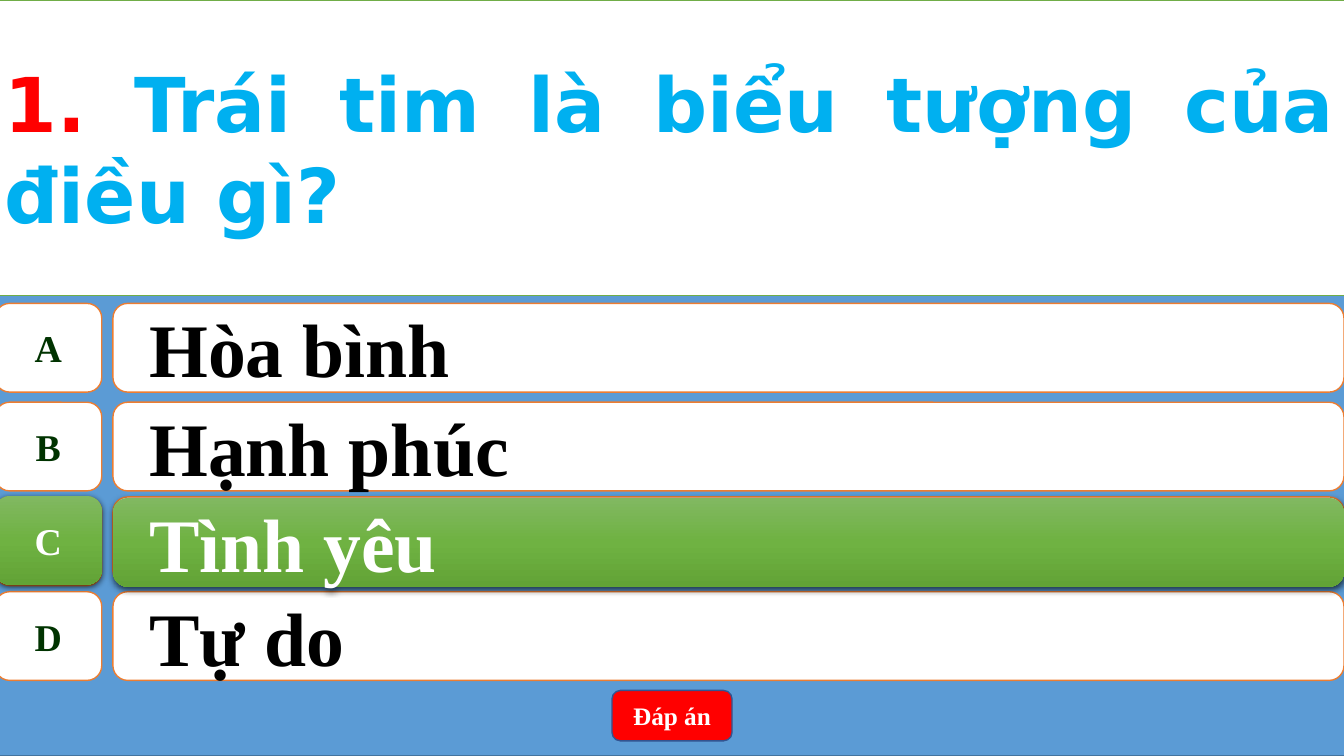
from dataclasses import dataclass
from typing import Optional

import pptx
import pptx.dml.color
import pptx.enum.shapes
import pptx.enum.text
import pptx.oxml
import pptx.oxml.ns
import pptx.util

Inches = pptx.util.Inches
SHAPES = pptx.enum.shapes.MSO_SHAPE
ALIGN = pptx.enum.text.PP_ALIGN

COLORS = {
    "backdrop": "5B9BD5", "backdrop_edge": "43739E",
    "white": "FFFFFF", "black": "000000", "orange": "ED7D31",
    "letter": "003300", "green": "70AD47",
    "red": "FF0000", "button_edge": "325491", "sky": "00B0F0",
    "green_top": "81B861", "green_middle": "6FB242", "green_bottom": "62A336",
}
FORMATS = {
    "question": {"size": pptx.util.Pt(54), "name": "DejaVu Sans", "bold": True},
    "answer": {"size": pptx.util.Pt(54), "name": "Times New Roman", "bold": True},
    "letter": {"size": pptx.util.Pt(27), "name": "Times New Roman", "bold": True},
    "button": {"size": pptx.util.Pt(18), "name": "Times New Roman", "bold": True},
}
LEFT, FULL_WIDTH = -0.05, 13.39
ROW_HEIGHT = 0.88


@dataclass
class Span:
    text: str
    color: str


@dataclass
class Panel:
    kind: int
    left: float
    top: float
    width: float
    height: float
    fill: Optional[str] = "white"  # None gives the green gradient
    line: Optional[str] = "orange"


@dataclass
class Row:
    letter: str
    answer: str
    top: float


ROWS = [
    Row("A", "Hòa bình", 3.01),
    Row("B", "Hạnh phúc", 3.99),
    Row("C", "", 4.93),
    Row("D", "Tự do", 5.87),
]


def rgb(name: str) -> pptx.dml.color.RGBColor:
    return pptx.dml.color.RGBColor.from_string(COLORS[name])


def add_green_finish(box) -> None:
    """Give a box the vertical green gradient and a soft shadow."""
    box.fill.gradient()
    box.fill.gradient_angle = 270
    properties = box._element.spPr
    namespace = pptx.oxml.ns.nsdecls("a")
    stops = properties.find(".//" + pptx.oxml.ns.qn("a:gsLst"))
    for stop in list(stops):
        stops.remove(stop)
    for index, name in enumerate(("green_top", "green_middle", "green_bottom")):
        stops.append(pptx.oxml.parse_xml(
            f'<a:gs {namespace} pos="{index * 50000}">'
            f'<a:srgbClr val="{COLORS[name]}"/></a:gs>'))
    effects = properties.find(pptx.oxml.ns.qn("a:effectLst"))
    effects.append(pptx.oxml.parse_xml(
        f'<a:outerShdw {namespace} blurRad="{pptx.util.Pt(4.5)}" '
        f'dist="{pptx.util.Pt(1.5)}" dir="5400000" algn="ctr" rotWithShape="0">'
        f'<a:srgbClr val="{COLORS["black"]}"><a:alpha val="63000"/></a:srgbClr>'
        '</a:outerShdw>'))


def add_panel(page, panel: Panel):
    box = page.shapes.add_shape(
        panel.kind, Inches(panel.left), Inches(panel.top),
        Inches(panel.width), Inches(panel.height))
    box.shadow.inherit = False
    if panel.fill:
        box.fill.solid()
        box.fill.fore_color.rgb = rgb(panel.fill)
    else:
        add_green_finish(box)
    if panel.line:
        box.line.color.rgb = rgb(panel.line)
        box.line.width = pptx.util.Pt(1)
    else:
        box.line.fill.background()
    return box


def write(box, style: str, align: int, spans: list[Span], wrap: bool = True):
    frame = box.text_frame
    frame.word_wrap = wrap
    frame.vertical_anchor = pptx.enum.text.MSO_ANCHOR.MIDDLE
    para = frame.paragraphs[0]
    para.alignment = align
    for span in spans:
        run = para.add_run()
        run.text = span.text
        for key, value in FORMATS[style].items():
            setattr(run.font, key, value)
        run.font.color.rgb = rgb(span.color)
    return para


def add_row(page, row: Row, answer_top: float, fill: Optional[str],
            line: Optional[str], letter_color: str, answer_color: str) -> None:
    letter_box = add_panel(page, Panel(
        SHAPES.FLOWCHART_ALTERNATE_PROCESS, LEFT, row.top, 1.06, ROW_HEIGHT, fill, line))
    answer_box = add_panel(page, Panel(
        SHAPES.ROUNDED_RECTANGLE, 1.12, answer_top, 12.21, ROW_HEIGHT, fill, line))
    if row.answer:
        write(letter_box, "letter", ALIGN.CENTER, [Span(row.letter, letter_color)], wrap=False)
        para = write(answer_box, "answer", ALIGN.LEFT, [Span(row.answer, answer_color)])
        para.level = 1
        indents = para._p.get_or_add_pPr()
        indents.set("marL", str(Inches(0.5)))
        indents.set("indent", str(Inches(-0.28)))


def main() -> None:
    deck = pptx.Presentation()
    deck.slide_width, deck.slide_height = Inches(13.33), Inches(7.5)
    page = deck.slides.add_slide(deck.slide_layouts[6])

    # Blue backdrop
    add_panel(page, Panel(SHAPES.RECTANGLE, LEFT, 0, FULL_WIDTH, 7.5,
                          "backdrop", "backdrop_edge"))

    # Answer rows; the plate of row C carries the green answer
    for row in ROWS:
        add_row(page, row, row.top, "white", "orange", "letter", "black")
    add_row(page, Row("C", "Tình yêu", 4.92), 4.94, None, None, "white", "white")

    # Answer button
    button = add_panel(page, Panel(SHAPES.ROUNDED_RECTANGLE, 6.07, 6.85, 1.19, 0.5,
                                   "red", "button_edge"))
    write(button, "button", ALIGN.CENTER, [Span("Đáp án", "white")])

    # Question
    question = add_panel(page, Panel(SHAPES.RECTANGLE, LEFT, 0, FULL_WIDTH, 2.93,
                                     "white", "green"))
    write(question, "question", ALIGN.JUSTIFY, [
        Span("1. ", "red"), Span("Trái tim là biểu tượng của điều gì?", "sky")])

    deck.save("out.pptx")


if __name__ == "__main__":
    main()
